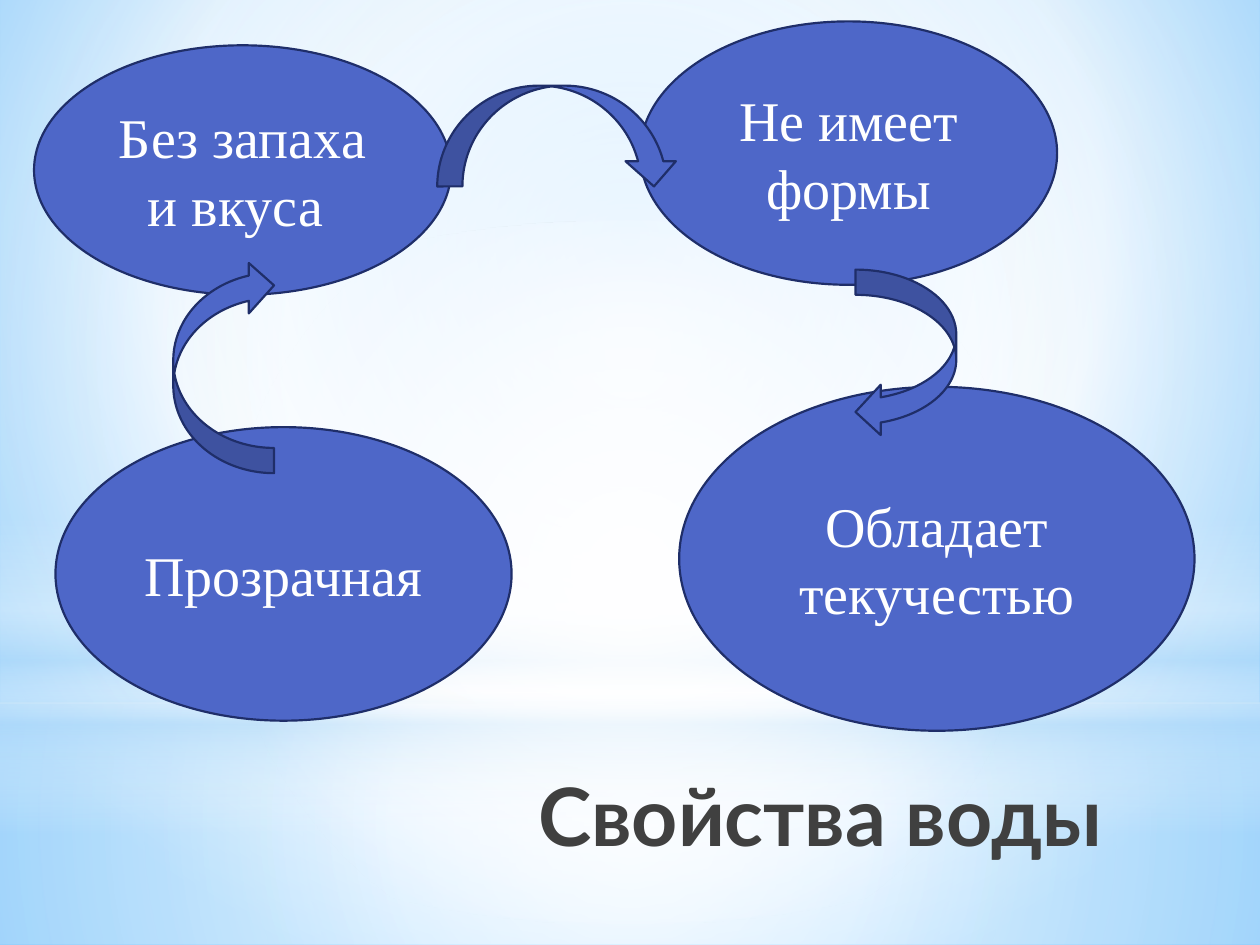
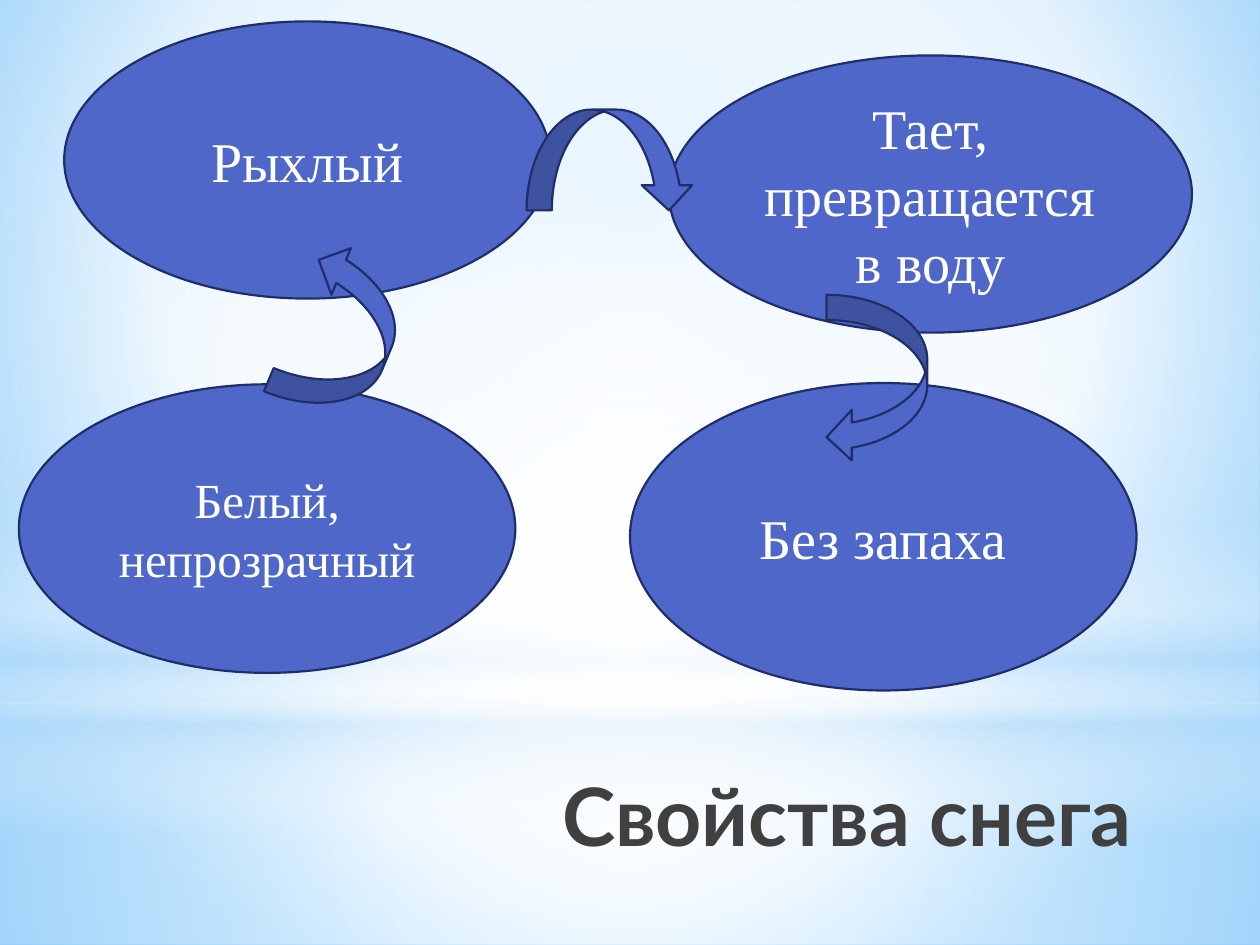
from typing import NamedTuple

from lxml.etree import SubElement
from pptx import Presentation
from pptx.dml.color import RGBColor
from pptx.enum.shapes import MSO_SHAPE as Preset
from pptx.enum.text import MSO_ANCHOR as Anchor, MSO_AUTO_SIZE as AutoSize, PP_ALIGN as Align
from pptx.oxml.ns import qn
from pptx.util import Inches, Pt

COLORS = {
    "bubble": "4E67C8", "outline": "1F2E69", "bubble_text": "FFFFFF", "title": "404040",
    "white": "FFFFFF", "mist": "B4DCFA", "sky": "9ED5FF", "deep_sky": "5BB9FF",
}
TITLE_FONT, BUBBLE_FONT = "Lato", "Times New Roman"
COLUMNS, ROWS = 10, 7.5
HORIZON = 5.58  # row where sky meets water
TITLE_ROW, TITLE_COLUMNS = 6.03, 7.12
ARROW_DEPTH = 0.8
CENTER = (50, 50, 50, 50)


class Box(NamedTuple):
    left: float
    top: float
    width: float
    height: float

    def cell(self, column, row, columns, rows):
        """Turn a grid range inside this box into slide lengths."""
        across, down = self.width / COLUMNS, self.height / ROWS
        return Box(Inches(self.left + column * across), Inches(self.top + row * down),
                   Inches(columns * across), Inches(rows * down))


SLIDE = Box(0, 0, 10, 7.5)


def rgb(name):
    return RGBColor.from_string(COLORS[name])


def write_text(frame, lines, *, size, font, color, bold=False,
               align=Align.CENTER, anchor=Anchor.MIDDLE):
    frame.word_wrap = True
    frame.auto_size = AutoSize.NONE
    frame.vertical_anchor = anchor
    for number, line in enumerate(lines):
        paragraph = frame.add_paragraph() if number else frame.paragraphs[0]
        paragraph.alignment = align
        run = paragraph.add_run()
        run.text = line
        run.font.size, run.font.name, run.font.bold = Pt(size), font, bold
        run.font.color.rgb = rgb(color)


def set_gradient(owner, fill, stops, focus=None):
    """Stops are (position, colour, opacity); without a focus the blend runs downwards."""
    fill.gradient()
    gradient = owner.element.find(".//" + qn("a:gradFill"))
    for child in list(gradient):
        gradient.remove(child)
    stop_list = SubElement(gradient, qn("a:gsLst"))
    for position, color, opacity in stops:
        stop = SubElement(stop_list, qn("a:gs"), pos=str(position * 1000))
        tone = SubElement(stop, qn("a:srgbClr"), val=COLORS[color])
        if opacity < 100:
            SubElement(tone, qn("a:alpha"), val=str(opacity * 1000))
    if focus is None:
        SubElement(gradient, qn("a:lin"), ang="5400000", scaled="0")
    else:
        circle = SubElement(gradient, qn("a:path"), path="circle")
        edges = {side: str(share * 1000) for side, share in zip("ltrb", focus)}
        SubElement(circle, qn("a:fillToRect"), **edges)


def add_preset(slide, preset, place):
    shape = slide.shapes.add_shape(preset, *place)
    shape.shadow.inherit = False
    return shape


def paint_master(master, slide, box):
    """Give the master its sky, water and glow, behind its placeholders."""
    set_gradient(master, master.background.fill,
                 [(0, "sky", 100), (60, "white", 100), (100, "deep_sky", 100)],
                 (20, 10, 20, 60))
    water = [(0, "white", 91), (37, "white", 76), (100, "mist", 79)]
    sky = [(0, "white", 89), (48, "white", 62), (100, "mist", 79)]
    horizon = [(0, "white", 0), (29, "white", 30), (45, "mist", 40),
               (55, "white", 26), (65, "mist", 60), (100, "white", 0)]
    glow = [(0, "white", 100), (56, "white", 0)]
    layers = [
        (Preset.RECTANGLE, HORIZON, ROWS - HORIZON, water, CENTER),
        (Preset.RECTANGLE, 0, HORIZON, sky, CENTER),
        (Preset.RECTANGLE, 4.12, 2.5, horizon, None),
        (Preset.OVAL, 1.75, HORIZON, glow, CENTER),
    ]
    tree = master.shapes.element if hasattr(master.shapes, "element") else master.element.cSld.spTree
    for depth, (preset, row, rows, stops, focus) in enumerate(layers):
        layer = add_preset(slide, preset, box.cell(0, row, COLUMNS, rows))
        layer.line.fill.background()
        set_gradient(layer, layer.fill, stops, focus)
        tree.insert(2 + depth, layer.element)


def add_title(slide, box, text, column, rows):
    title = slide.shapes.title
    title.left, title.top, title.width, title.height = box.cell(
        column, TITLE_ROW, TITLE_COLUMNS, rows)
    write_text(title.text_frame, [text], size=46, font=TITLE_FONT, color="title",
               bold=True, align=Align.RIGHT, anchor=Anchor.TOP)


def add_figure(slide, preset, place):
    """Blue outlined shape shared by bubbles and arrows."""
    figure = add_preset(slide, preset, place)
    figure.fill.solid()
    figure.fill.fore_color.rgb = rgb("bubble")
    figure.line.color.rgb = rgb("outline")
    figure.line.width = Pt(1.25)
    return figure


def add_properties(slide, box, bubbles, arrows):
    """Draw the bubbles, then the arrows that lead from one to the next."""
    for lines, size, place in bubbles:
        bubble = add_figure(slide, Preset.OVAL, box.cell(*place))
        write_text(bubble.text_frame, lines, size=size, font=BUBBLE_FONT, color="bubble_text")
    for preset, column, row, length, turn in arrows:
        flat = preset == Preset.CURVED_DOWN_ARROW
        extent = (length, ARROW_DEPTH) if flat else (ARROW_DEPTH, length)
        arrow = add_figure(slide, preset, box.cell(column, row, *extent))
        arrow.rotation = turn


# Title (text, column, rows), bubbles (lines, size, place), arrows (kind, column, row, length, turn)
WATER = (
    ("Свойства воды ", 1.88, 1.25),
    [
        (["Без запаха и вкуса "], 32, (0.27, 0.36, 3.31, 1.98)),
        (["Не имеет формы"], 32, (5.08, 0.17, 3.31, 2.09)),
        (["Обладает текучестью"], 32, (5.39, 3.07, 4.09, 2.73)),
        (["Прозрачная"], 32, (0.44, 3.39, 3.62, 2.33)),
    ],
    [
        (Preset.CURVED_LEFT_ARROW, 6.79, 2.14, 1.33, 0),
        (Preset.CURVED_DOWN_ARROW, 3.47, 0.68, 1.92, 0),
        (Preset.CURVED_DOWN_ARROW, 0.93, 2.51, 1.69, 270),
    ],
)
SNOW = (
    ("Свойства снега", 1.96, 0.87),
    [
        (["Белый,", "непрозрачный"], 28, (0.15, 3.05, 3.94, 2.29)),
        (["Рыхлый"], 32, (0.51, 0.17, 3.86, 2.2)),
        (["Тает, превращается в воду"], 32, (5.31, 0.44, 4.15, 2.2)),
        (["Без запаха"], 32, (5, 3.04, 4.02, 2.44)),
    ],
    [
        (Preset.CURVED_RIGHT_ARROW, 2.32, 1.98, 1.33, 202.6),
        (Preset.CURVED_LEFT_ARROW, 6.56, 2.34, 1.33, 0),
        (Preset.CURVED_DOWN_ARROW, 4.18, 0.87, 1.33, 0),
    ],
)


def main():
    deck = Presentation()
    deck.slide_width, deck.slide_height = Inches(SLIDE.width), Inches(SLIDE.height)
    title_only = deck.slide_layouts.get_by_name("Title Only")
    for title, bubbles, arrows in (WATER, SNOW):
        slide = deck.slides.add_slide(title_only)
        add_title(slide, SLIDE, *title)
        add_properties(slide, SLIDE, bubbles, arrows)
    paint_master(deck.slide_master, deck.slides[0], SLIDE)
    deck.save("out.pptx")


if __name__ == "__main__":
    main()
